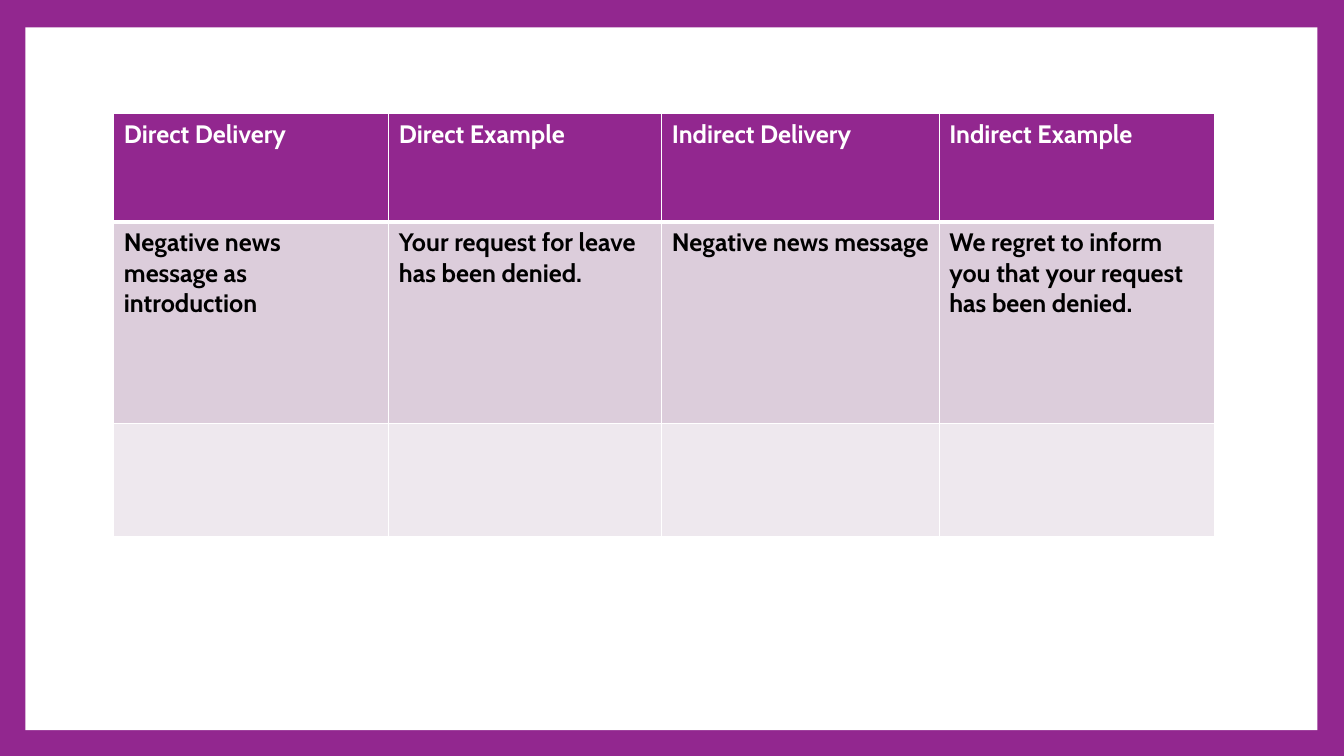
import pptx
import pptx.dml.color
import pptx.enum.shapes
import pptx.oxml.ns
import pptx.util
from lxml import etree

Cm = pptx.util.Cm
Pt = pptx.util.Pt

COLORS = {
    "purple": "92278F",
    "white": "FFFFFF",
    "black": "000000",
    "mauve": "DCCDDB",
    "pale": "EEE8EE",
}

COLUMN_WIDTHS = [6.93, 6.88, 6.99, 6.93]
# Each row: height, fill, text colour, top border, bottom border, texts
DELIVERY_ROWS = [
    (2.72, "purple", "white", 1, 3,
     ["Direct Delivery", "Direct Example", "Indirect Delivery", "Indirect Example"]),
    (5.08, "mauve", "black", 3, 1,
     ["Negative news message as introduction",
      "Your request for leave has been denied.",
      "Negative news message",
      "We regret to inform you that your request has been denied."]),
    (2.84, "pale", "black", 1, 1, [""] * 4),
]


class SlideBuilder:
    def __init__(self, page, font_name="Cabin", font_size=18):
        self.page = page
        self.font_name = font_name
        self.font_size = font_size

    def paint(self, fill, color):
        fill.solid()
        fill.fore_color.rgb = self.rgb(color)

    def rgb(self, color):
        return pptx.dml.color.RGBColor.from_string(COLORS[color])

    def background(self, color):
        self.paint(self.page.background.fill, color)

    def panel(self, left, top, width, height, color):
        shape = self.page.shapes.add_shape(
            pptx.enum.shapes.MSO_SHAPE.RECTANGLE,
            Cm(left), Cm(top), Cm(width), Cm(height))
        shape.shadow.inherit = False
        self.paint(shape.fill, color)
        shape.line.fill.background()

    def borders(self, cell, top, bottom, color="white"):
        """Draw 1 pt side borders and the given top and bottom widths."""
        qn = pptx.oxml.ns.qn
        properties = cell._tc.get_or_add_tcPr()
        sides = [("a:lnL", 1), ("a:lnR", 1), ("a:lnT", top), ("a:lnB", bottom)]
        for position, (tag, width) in enumerate(sides):
            line = etree.Element(qn(tag), w=str(Pt(width)))
            fill = etree.SubElement(line, qn("a:solidFill"))
            etree.SubElement(fill, qn("a:srgbClr"), val=COLORS[color])
            properties.insert(position, line)

    def cell(self, cell, text, fill, color):
        self.paint(cell.fill, fill)
        para = cell.text_frame.paragraphs[0]
        para.text = text
        para.font.name = self.font_name
        para.font.size = Pt(self.font_size)
        para.font.bold = True
        para.font.color.rgb = self.rgb(color)

    def table(self, left, top, widths, rows):
        height = sum(row[0] for row in rows)
        table = self.page.shapes.add_table(
            len(rows), len(widths), Cm(left), Cm(top),
            Cm(sum(widths)), Cm(height)).table
        for column, width in zip(table.columns, widths):
            column.width = Cm(width)
        for row, (height, fill, color, above, below, texts) in zip(table.rows, rows):
            row.height = Cm(height)
            for cell, text in zip(row.cells, texts):
                self.cell(cell, text, fill, color)
                self.borders(cell, above, below)


def main():
    deck = pptx.Presentation()
    deck.slide_width, deck.slide_height = Cm(33.87), Cm(19.05)
    builder = SlideBuilder(deck.slides.add_slide(deck.slide_layouts[6]))
    builder.background("purple")
    builder.panel(0.64, 0.69, 32.56, 17.71, "white")
    builder.table(2.87, 2.87, COLUMN_WIDTHS, DELIVERY_ROWS)
    deck.save("out.pptx")


if __name__ == "__main__":
    main()
